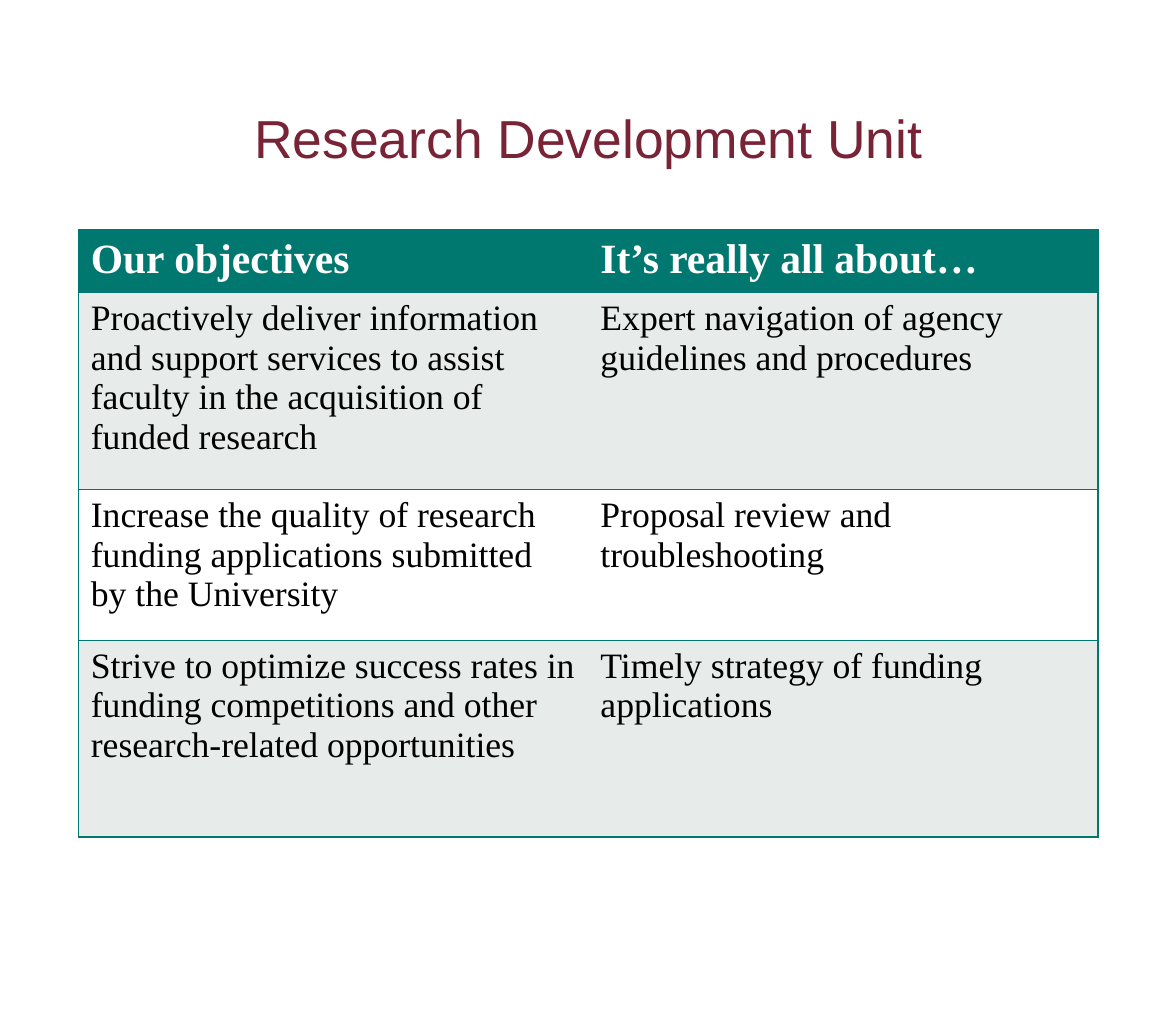
import pptx
import pptx.util
import pptx.dml.color
import pptx.enum.text
import pptx.oxml
import pptx.oxml.ns

Pt = pptx.util.Pt

# Content
TITLE = "Research Development Unit"
ROWS = [
    ("Our objectives", "It’s really all about…"),
    ("Proactively deliver information and support services to assist "
     "faculty in the acquisition of funded research",
     "Expert navigation of agency guidelines and procedures"),
    ("Increase the quality of research funding applications submitted "
     "by the University",
     "Proposal review and troubleshooting"),
    ("Strive to optimize success rates in funding competitions and other "
     "research-related opportunities",
     "Timely strategy of funding applications"),
]
HIGHS = [42.3, 132.5, 101.5, 132.5]

# Layout and colours
LEFT, WIDE = 53, 686.4
GREEN, WHITE, PALE, BLACK, WINE = "00776F", "FFFFFF", "E7ECEB", "000000", "782336"


def color(hue):
    return pptx.dml.color.RGBColor.from_string(hue)


def style(para, face, size, hue, bold=False):
    font = para.font
    font.name, font.size, font.bold = face, Pt(size), bold
    font.color.rgb = color(hue)


def border(cell, shown):
    """Draw the shown sides in green and hide the others."""
    props = cell._tc.get_or_add_tcPr()
    for spot, side in enumerate("LRTB"):
        paint = (f'<a:solidFill><a:srgbClr val="{GREEN}"/></a:solidFill>'
                 if side in shown else "<a:noFill/>")
        line = pptx.oxml.parse_xml(
            f'<a:ln{side} {pptx.oxml.ns.nsdecls("a")} w="{Pt(1)}">{paint}</a:ln{side}>')
        props.insert(spot, line)


deck = pptx.Presentation()
deck.slide_width, deck.slide_height = Pt(792), Pt(684)
slide = deck.slides.add_slide(deck.slide_layouts[6])

# Title
box = slide.shapes.add_textbox(Pt(LEFT), Pt(67.5), Pt(WIDE), Pt(50))
frame = box.text_frame
frame.word_wrap = True
frame.vertical_anchor = pptx.enum.text.MSO_ANCHOR.MIDDLE
frame.margin_left = frame.margin_right = Pt(8.6)
frame.margin_top = frame.margin_bottom = Pt(4.3)
frame.text = TITLE
head = frame.paragraphs[0]
head.alignment = pptx.enum.text.PP_ALIGN.CENTER
style(head, "Arial", 36, WINE)

# Table
table = slide.shapes.add_table(
    len(ROWS), 2, Pt(LEFT), Pt(154.8), Pt(WIDE), Pt(sum(HIGHS))).table
for col in table.columns:
    col.width = Pt(WIDE / 2)

for r, (texts, high) in enumerate(zip(ROWS, HIGHS)):
    table.rows[r].height = Pt(high)
    top = r == 0
    fill = GREEN if top else PALE if r % 2 else WHITE
    for c, text in enumerate(texts):
        cell = table.cell(r, c)
        cell.text = text
        cell.margin_left = cell.margin_right = Pt(8.2)
        cell.margin_top = cell.margin_bottom = Pt(4.3)
        cell.fill.solid()
        cell.fill.fore_color.rgb = color(fill)
        border(cell, "LR"[c] + "TB")
        style(cell.text_frame.paragraphs[0], "Times New Roman",
              28 if top else 24, WHITE if top else BLACK, top)

deck.save("out.pptx")
